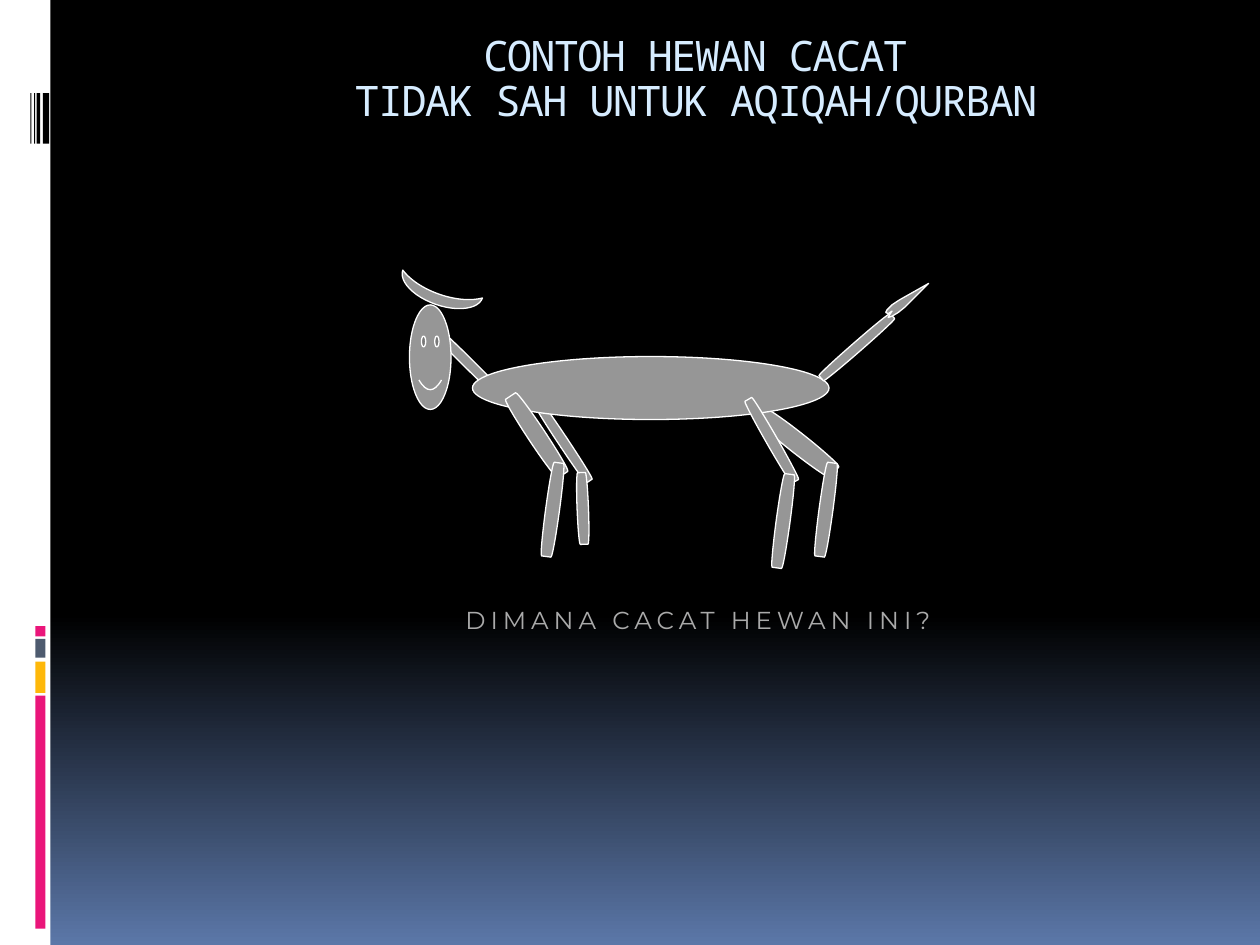
from pptx import Presentation
from pptx import util as u
from pptx.dml.color import RGBColor
from pptx.enum import shapes, text

KIND = shapes.MSO_SHAPE
LIMB = KIND.FLOWCHART_TERMINATOR
HUES = {
    "white": "FFFFFF", "black": "000000", "blue": "5B77A8",
    "pink": "EA157A", "gold": "FEB80A", "slate": "4E5B6F",
    "body": "969696", "title": "D6ECFF", "ask": "AAAAAA",
}


def hue(name):
    return RGBColor.from_string(HUES[name])


def blend(fill, stops):
    """Vertical gradient, top to bottom, from two (position, colour) stops."""
    fill.gradient()
    fill.gradient_angle = 270
    for stop, (spot, name) in zip(fill.gradient_stops, stops):
        stop.position = spot
        stop.color.rgb = hue(name)


def paint(shape, fill, line=None):
    shape.shadow.inherit = False
    shape.fill.solid()
    shape.fill.fore_color.rgb = hue(fill)
    if line:
        shape.line.color.rgb = hue(line)
        shape.line.width = u.Pt(0.75)
    else:
        shape.line.fill.background()


def draw(slide, kind, x, y, w, h, fill, line=None, turn=0):
    shape = slide.shapes.add_shape(
        kind, u.Inches(x), u.Inches(y), u.Inches(w), u.Inches(h))
    shape.rotation = turn
    paint(shape, fill, line)
    return shape


def write(slide, box, words, font, size, gap, wrap=True):
    """Centred text; gap is the letter spacing in points."""
    frame = slide.shapes.add_textbox(*map(u.Inches, box)).text_frame
    frame.word_wrap = wrap
    frame.vertical_anchor = text.MSO_ANCHOR.TOP
    frame.text = words
    para = frame.paragraphs[0]
    para.alignment = text.PP_ALIGN.CENTER
    for run in para.runs:
        run.font.name = font
        run.font.size = u.Pt(size)
        run.font._element.set("spc", str(round(gap * 100)))
    return para


def side(slide, x, y, w, h):
    """White strip with coloured blocks and a small bar code."""
    draw(slide, KIND.RECTANGLE, x, y, w, h, "white")
    blocks = [(5.52, 1.85, "pink"), (5.25, 0.25, "gold"),
              (5.07, 0.15, "slate"), (4.97, 0.08, "pink")]
    for top, tall, name in blocks:
        draw(slide, KIND.RECTANGLE, x + 0.28, y + top, 0.08, tall, name)
    for left, wide in [(0.34, 0.05), (0.29, 0.03), (0.27, 0.01), (0.24, 0.01)]:
        draw(slide, KIND.RECTANGLE, x + left, y + 0.74, wide, 0.4, "black")


def tuft(slide, x, y):
    """Hairy tip of the tail."""
    points = [(3.83, 0.47), (3.81, 0.5), (3.8, 0.52), (3.83, 0.51),
              (3.88, 0.48), (3.93, 0.44), (4.12, 0.25), (3.89, 0.38),
              (3.83, 0.42), (3.79, 0.46), (3.78, 0.48), (3.8, 0.49)]
    spots = [(u.Inches(x + a), u.Inches(y + b)) for a, b in points]
    form = slide.shapes.build_freeform(*spots[0], scale=1.0)
    form.add_line_segments(spots[1:], close=True)
    paint(form.convert_to_shape(), "body", "white")


def animal(slide, x, y):
    """Goat, back to front: kind, left, top, width, height, rotation."""
    parts = [
        # far legs and neck
        (LIMB, 1.18, 1.13, 0.08, 0.75, 326.4),
        (LIMB, 3, 1.14, 0.16, 0.75, 308.3),
        (LIMB, 0.42, 0.5, 0.08, 0.75, 314.7),
        # trunk
        (KIND.OVAL, 0.5, 0.83, 2.83, 0.5, 0),
        # near thighs
        (LIMB, 2.83, 1.12, 0.09, 0.75, 330.2),
        (LIMB, 0.94, 1.08, 0.14, 0.75, 326.4),
        # shins
        (LIMB, 2.91, 1.76, 0.11, 0.75, 187.7),
        (LIMB, 1.08, 1.67, 0.11, 0.75, 187.7),
        (LIMB, 1.33, 1.75, 0.09, 0.57, 177.8),
        (LIMB, 3.25, 1.67, 0.11, 0.75, 187.7),
        # tail, head, horns
        (LIMB, 3.51, 0.38, 0.08, 0.75, 228.9),
        (KIND.SMILEY_FACE, 0, 0.42, 0.33, 0.83, 0),
        (KIND.MOON, 0.15, 0, 0.17, 0.67, 289.3),
    ]
    for kind, left, top, wide, tall, turn in parts:
        draw(slide, kind, x + left, y + top, wide, tall, "body", "white", turn)
    tuft(slide, x, y)


def main():
    deck = Presentation()
    deck.slide_width, deck.slide_height = u.Inches(10), u.Inches(7.5)
    slide = deck.slides.add_slide(deck.slide_layouts[6])
    blend(slide.background.fill, [(0.65, "black"), (1, "blue")])
    side(slide, 0, 0, 0.4, 7.5)

    # Title
    head = write(slide, (1.26, 0.23, 8.52, 1.16),
                 "CONTOH HEWAN CACAT\vTIDAK SAH UNTUK AQIQAH/QURBAN",
                 "Noto Sans Mono", 24, -1)
    head.line_spacing = 0.9
    for run in head.runs:
        run.font.color.rgb = hue("title")

    animal(slide, 3.25, 2)

    # Question
    ask = write(slide, (3.5, 4.75, 4.08, 0.83), "DIMANA CACAT HEWAN INI?",
                "Montserrat", 14, 2.8, wrap=False)
    blend(ask.runs[0].font.fill, [(0, "ask"), (1, "white")])

    deck.save("out.pptx")


if __name__ == "__main__":
    main()
